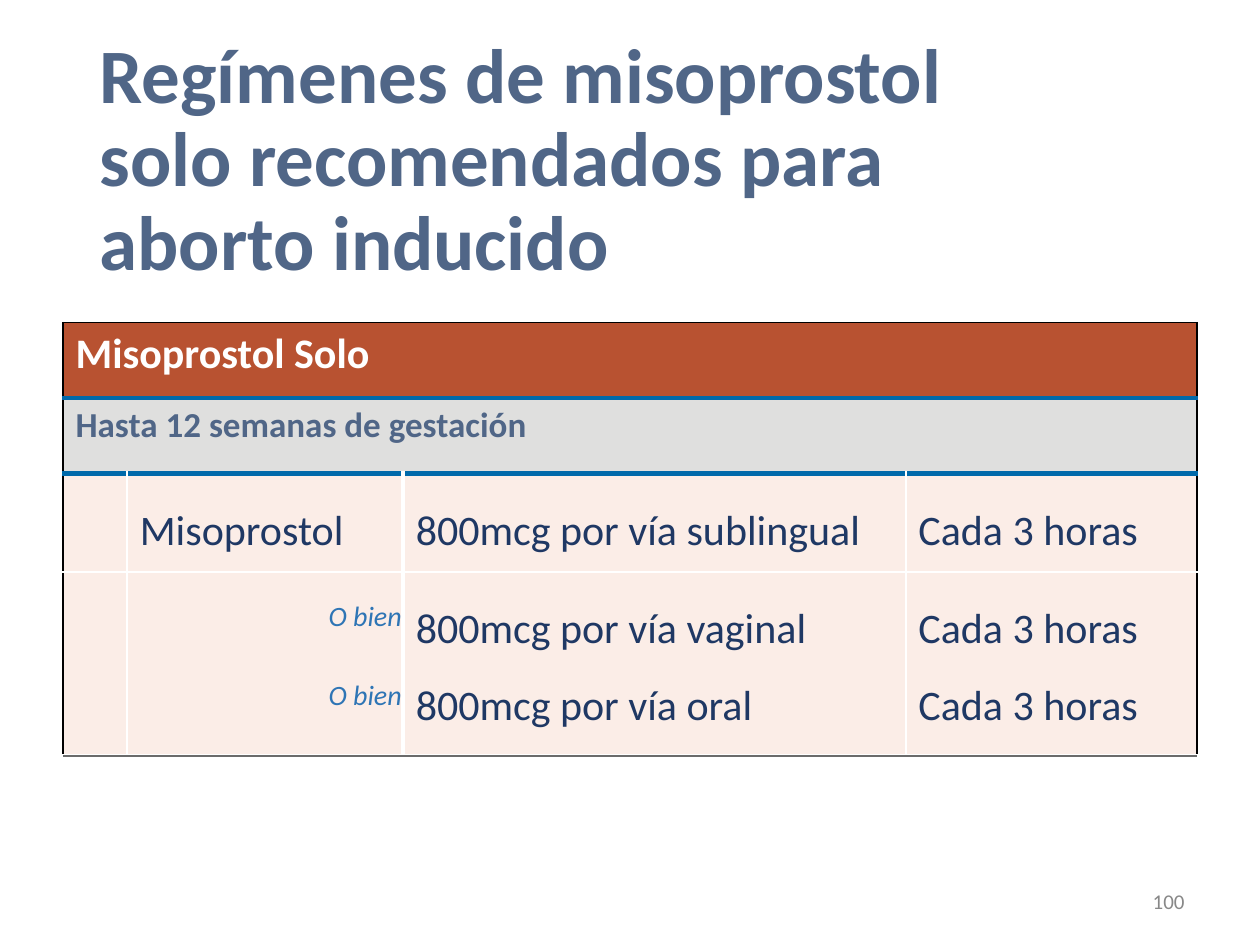
from lxml import etree
from pptx import Presentation
from pptx.dml.color import RGBColor
from pptx.enum.shapes import MSO_CONNECTOR
from pptx.enum.text import MSO_ANCHOR, MSO_AUTO_SIZE, PP_ALIGN
from pptx.oxml.ns import qn
from pptx.util import Emu, Pt

STRAIGHT = MSO_CONNECTOR.STRAIGHT
LEFT, RIGHT = PP_ALIGN.LEFT, PP_ALIGN.RIGHT
TOP, MIDDLE = MSO_ANCHOR.TOP, MSO_ANCHOR.MIDDLE
NO_FIT = MSO_AUTO_SIZE.NONE

SCALE = 9144  # EMU per px, 100 px to the inch
FONT = "Calibri"
SLATE, NAVY, WHITE, BLACK, BLUE = "506687", "1F3864", "FFFFFF", "000000", "0069AA"
RUST, GREY, BLUSH = "B85231", "DFDFDE", "FBEDE7"

TITLE = dict(size=44, bold=True, color=SLATE)
HEADER = dict(size=24, bold=True, color=WHITE)
SUBHEADER = dict(size=20, bold=True, color=SLATE)
BODY = dict(size=24, bold=False, color=NAVY)
OPTION = dict(size=16, italic=True, color="2E75B5")
NUMBER = dict(size=12, color="888888")

COLUMNS = [51, 219, 399, 231]
ROWS = [60, 60, 78, 145]
BANDS = [("Misoprostol Solo", HEADER, RUST),
         ("Hasta 12 semanas de gestación", SUBHEADER, GREY)]
REGIMENS = [["", "Misoprostol", "800mcg por vía sublingual", "Cada 3 horas"],
            ["", "", "800mcg por vía vaginal\n800mcg por vía oral",
             "Cada 3 horas\nCada 3 horas"]]
# Grid lines as (colour, points), left to right and top to bottom
VERTICALS = [(BLACK, 1), (WHITE, 1), (WHITE, 3), (WHITE, 1), (BLACK, 1)]
HORIZONTALS = [(BLACK, 1), (BLUE, 3), (BLUE, 3), (WHITE, 1), (WHITE, 1)]


def px(value):
    return Emu(value * SCALE)


def rgb(value):
    return RGBColor.from_string(value)


def write(frame, text, style, spacing=None, align=LEFT):
    """Fill a text frame, one paragraph for each line of text."""
    for index, line in enumerate(text.split("\n")):
        para = frame.paragraphs[0] if index == 0 else frame.add_paragraph()
        para.alignment, para.line_spacing = align, spacing
        span = para.add_run()
        span.text = line
        span.font.name = FONT
        for name, value in style.items():
            if name == "color":
                span.font.color.rgb = rgb(value)
            else:
                setattr(span.font, name, Pt(value) if name == "size" else value)


def place(shape, box):
    for name, value in zip(("left", "top", "width", "height"), box):
        setattr(shape, name, px(value))


def add_title(page, box, text):
    title = page.shapes.title
    place(title, box)
    frame = title.text_frame
    frame.word_wrap, frame.auto_size, frame.vertical_anchor = True, NO_FIT, MIDDLE
    write(frame, text, TITLE, spacing=0.9)


def add_label(page, box, text, style, align=LEFT, anchor=TOP):
    frame = page.shapes.add_textbox(*map(px, box)).text_frame
    frame.word_wrap, frame.vertical_anchor = True, anchor
    write(frame, text, style, align=align)


def paint_cell(cell, fill, borders):
    """Fill a cell and draw its borders, given in the order L, R, T, B."""
    cell.fill.solid()
    cell.fill.fore_color.rgb = rgb(fill)
    props = cell._tc.get_or_add_tcPr()
    for index, (side, (color, points)) in enumerate(zip("LRTB", borders)):
        line = etree.Element(qn(f"a:ln{side}"), w=str(Pt(points)))
        solid = etree.SubElement(line, qn("a:solidFill"))
        etree.SubElement(solid, qn("a:srgbClr"), val=color)
        props.insert(index, line)


def add_regimen_table(page, box):
    last = len(COLUMNS) - 1
    table = page.shapes.add_table(len(ROWS), len(COLUMNS), *map(px, box)).table
    table.horz_banding = False
    for column, width in zip(table.columns, COLUMNS):
        column.width = px(width)
    for row, height in zip(table.rows, ROWS):
        row.height = px(height)

    # Full-width bands
    for r, (text, style, fill) in enumerate(BANDS):
        table.cell(r, 0).merge(table.cell(r, last))
        write(table.cell(r, 0).text_frame, text, style)
        for c in range(last + 1):
            paint_cell(table.cell(r, c), fill,
                       [VERTICALS[0], VERTICALS[-1], *HORIZONTALS[r:r + 2]])

    # Regimens
    for r, texts in enumerate(REGIMENS, len(BANDS)):
        for c, text in enumerate(texts):
            if text:
                write(table.cell(r, c).text_frame, text, BODY, spacing=1.5)
            paint_cell(table.cell(r, c), BLUSH,
                       [*VERTICALS[c:c + 2], *HORIZONTALS[r:r + 2]])


def add_rule(page, left, top, width):
    rule = page.shapes.add_connector(STRAIGHT, px(left), px(top), px(left + width), px(top))
    rule.line.color.rgb = rgb("6B6B6B")
    rule.line.width = Pt(0.75)
    etree.SubElement(rule._element.spPr, qn("a:effectLst"))


def main():
    deck = Presentation()
    deck.slide_width, deck.slide_height = px(1000), px(750)
    page = deck.slides.add_slide(deck.slide_layouts[5])

    add_title(page, (69, 65, 782, 127),
              "Regímenes de misoprostol solo recomendados para aborto inducido")
    add_regimen_table(page, (50, 256, sum(COLUMNS), sum(ROWS)))
    for top in (470, 533):
        add_label(page, (251, top, 80, 37), "O bien", OPTION)
    add_rule(page, 50, 600, sum(COLUMNS))
    add_label(page, (717, 695, 233, 40), "100", NUMBER, RIGHT, MIDDLE)

    deck.save("out.pptx")


if __name__ == "__main__":
    main()
